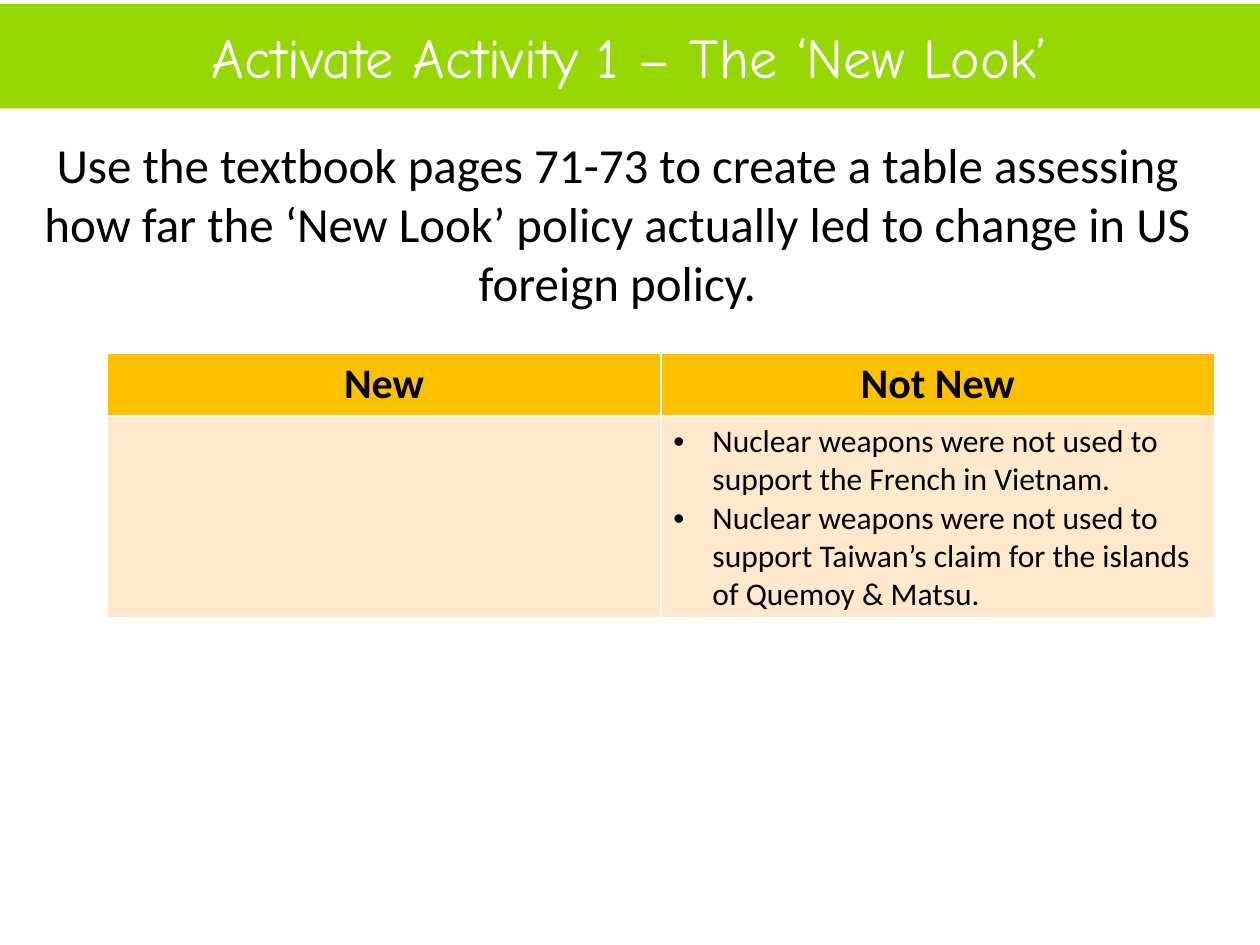
from lxml.etree import SubElement
from pptx import Presentation
from pptx.dml.color import RGBColor
from pptx.enum.text import MSO_ANCHOR as Anchor, MSO_AUTO_SIZE as AutoSize, PP_ALIGN as Align
from pptx.oxml.ns import qn
from pptx.util import Inches, Pt

COLORS = {"banner": "97D700", "header": "FFC000", "body": "FFE8CC", "white": "FFFFFF", "black": "000000"}
TITLE = "Activate Activity 1 – The ‘New Look’"
TASK = ("Use the textbook pages 71-73 to create a table assessing how far the "
        "‘New Look’ policy actually led to change in US foreign policy.")
COLUMNS = {
    "New": [],
    "Not New": [
        "Nuclear weapons were not used to support the French in Vietnam.",
        "Nuclear weapons were not used to support Taiwan’s claim for the islands of Quemoy & Matsu.",
    ],
}
FORMATS = {
    "title": {"name": "Comic Neue", "size": Pt(32), "bold": False},
    "task": {"name": "Calibri", "size": Pt(28), "bold": False},
    "header": {"name": "Calibri", "size": Pt(24), "bold": True},
    "body": {"name": "Calibri", "size": Pt(18), "bold": False},
}


def fill_solid(target, color):
    """Give a shape or table cell a solid fill."""
    target.fill.solid()
    target.fill.fore_color.rgb = RGBColor.from_string(COLORS[color])


def write(paragraph, text, style, color="black", align=Align.CENTER):
    """Put formatted text in a paragraph."""
    paragraph.text = text
    paragraph.alignment = align
    for name, value in FORMATS[style].items():
        setattr(paragraph.font, name, value)
    paragraph.font.color.rgb = RGBColor.from_string(COLORS[color])


def add_bullet(paragraph, indent):
    """Add a round bullet with a hanging indent."""
    properties = paragraph._p.get_or_add_pPr()
    properties.set("marL", str(indent))
    properties.set("indent", str(-indent))
    SubElement(properties, qn("a:buFont"), typeface="Arial")
    SubElement(properties, qn("a:buChar"), char="•")


def place_title(slide, left, top, width, height):
    """Turn the title placeholder into the banner."""
    title = slide.shapes.title
    title.left, title.top, title.width, title.height = left, top, width, height
    fill_solid(title, "banner")
    frame = title.text_frame
    frame.auto_size = AutoSize.NONE
    frame.vertical_anchor = Anchor.MIDDLE
    write(frame.paragraphs[0], TITLE, "title", "white")


def add_task(slide, left, top, width, height):
    """Add the task instruction."""
    frame = slide.shapes.add_textbox(left, top, width, height).text_frame
    frame.word_wrap = True
    write(frame.paragraphs[0], TASK, "task")


def add_comparison(slide, left, top, width, height):
    """Add the table of what was new and not new."""
    table = slide.shapes.add_table(2, len(COLUMNS), left, top, width, height).table
    header_height = Inches(0.5)
    table.rows[0].height = header_height
    table.rows[1].height = height - header_height
    for index, (heading, points) in enumerate(COLUMNS.items()):
        header, body = table.cell(0, index), table.cell(1, index)
        fill_solid(header, "header")
        fill_solid(body, "body")
        write(header.text_frame.paragraphs[0], heading, "header")
        frame = body.text_frame
        for number, point in enumerate(points):
            paragraph = frame.add_paragraph() if number else frame.paragraphs[0]
            add_bullet(paragraph, Inches(0.31))
            write(paragraph, point, "body", align=Align.LEFT)


def main():
    """Build and save the slide."""
    presentation = Presentation()
    presentation.slide_width, presentation.slide_height = Inches(10), Inches(7.5)
    slide = presentation.slides.add_slide(presentation.slide_layouts[5])
    place_title(slide, Inches(0), Inches(0.03), Inches(10), Inches(0.83))
    add_task(slide, Inches(0.17), Inches(1.02), Inches(9.46), Inches(1.51))
    add_comparison(slide, Inches(0.85), Inches(2.8), Inches(8.79), Inches(2.1))
    presentation.save("out.pptx")


if __name__ == "__main__":
    main()
